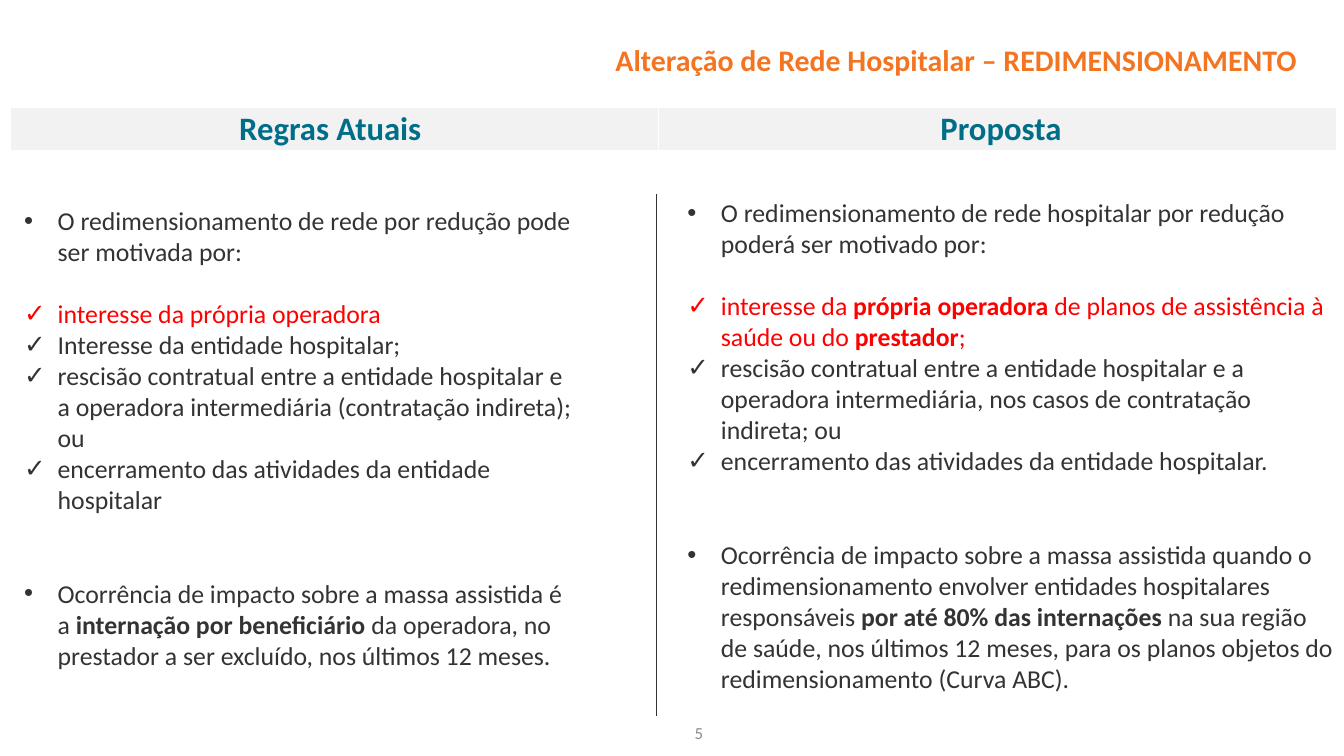
from lxml import etree
from pptx import Presentation
from pptx.dml.color import RGBColor
from pptx.enum.shapes import MSO_CONNECTOR
from pptx.enum.text import MSO_ANCHOR, PP_ALIGN
from pptx.oxml.ns import qn
from pptx.util import Cm, Pt

ORANGE = RGBColor(0xF4, 0x75, 0x21)
TEAL = RGBColor(0x00, 0x6E, 0x89)
BROWN = RGBColor(0xA0, 0x5A, 0x09)
RED = RGBColor(0xFF, 0x00, 0x00)
DARK = RGBColor(0x33, 0x33, 0x33)
GRAY = RGBColor(0x89, 0x89, 0x89)
LIGHT = RGBColor(0xF2, 0xF2, 0xF2)

DOT, CHECK = "•", "✓"

# Each item: bullet, blank lines before it, colour, runs as (wording, bold)
CURRENT_RULES = [
    (DOT, 0, DARK, [("O redimensionamento de rede por redução pode ser motivada por:", False)]),
    (CHECK, 1, RED, [("interesse da própria operadora", False)]),
    (CHECK, 0, DARK, [("Interesse da entidade hospitalar;", False)]),
    (CHECK, 0, DARK, [("rescisão contratual entre a entidade hospitalar e a operadora "
                       "intermediária (contratação indireta); ou", False)]),
    (CHECK, 0, DARK, [("encerramento das atividades da entidade hospitalar", False)]),
    (DOT, 2, DARK, [("Ocorrência de impacto sobre a massa assistida é a ", False),
                    ("internação por beneficiário ", True),
                    ("da operadora, no prestador a ser excluído, nos últimos 12 meses.", False)]),
]
PROPOSAL = [
    (DOT, 0, DARK, [("O redimensionamento de rede hospitalar por redução poderá ser "
                     "motivado por:", False)]),
    (CHECK, 1, RED, [("interesse da ", False), ("própria operadora ", True),
                     ("de planos de assistência à saúde ou do ", False),
                     ("prestador", True), (";", False)]),
    (CHECK, 0, DARK, [("rescisão contratual entre a entidade hospitalar e a operadora "
                       "intermediária, nos casos de contratação indireta; ou", False)]),
    (CHECK, 0, DARK, [("encerramento das atividades da entidade hospitalar.", False)]),
    (DOT, 2, DARK, [("Ocorrência de impacto sobre a massa assistida quando o redimensionamento "
                     "envolver entidades hospitalares responsáveis ", False),
                    ("por até 80% das internações", True),
                    (" na sua região de saúde, nos últimos 12 meses, para os planos objetos "
                     "do redimensionamento (Curva ABC).", False)]),
]


class SlideBuilder:
    font = "Calibri"
    body_size = 27.6
    line_height = 33.7
    indent = Cm(1.27)

    def __init__(self, slide):
        self.slide = slide

    def run(self, paragraph, wording, size, color, bold=False):
        run = paragraph.add_run()
        run.text = wording
        run.font.name = self.font
        run.font.size = Pt(size)
        run.font.bold = bold
        run.font.color.rgb = color

    def box(self, left, top, width, height):
        area = self.slide.shapes.add_textbox(Cm(left), Cm(top), Cm(width), Cm(height))
        area.text_frame.word_wrap = True
        return area.text_frame

    def title(self, wording):
        frame = self.box(0, 1.12, 50.8, 2.29)
        frame.vertical_anchor = MSO_ANCHOR.MIDDLE
        frame.margin_right = Cm(1.5)
        frame.paragraphs[0].alignment = PP_ALIGN.RIGHT
        self.run(frame.paragraphs[0], wording, 32, ORANGE, True)

    def page_number(self, number):
        frame = self.box(26.01, 27.2, 1.98, 1.02)
        self.run(frame.paragraphs[0], number, 18, GRAY)

    def bullet(self, paragraph, mark):
        props = paragraph._p.get_or_add_pPr()
        props.set("marL", str(self.indent))
        props.set("indent", str(-self.indent))
        etree.SubElement(props, qn("a:buFont"), typeface="Arial")
        etree.SubElement(props, qn("a:buChar"), char=mark)

    def bullet_list(self, left, top, width, height, items):
        frame = self.box(left, top, width, height)
        for index, (mark, gap, color, runs) in enumerate(items):
            paragraph = frame.add_paragraph() if index else frame.paragraphs[0]
            self.bullet(paragraph, mark)
            if gap:
                paragraph.space_before = Pt(gap * self.line_height)
            for wording, bold in runs:
                self.run(paragraph, wording, self.body_size, color, bold)

    def cell_borders(self, cell):
        props = cell._tc.get_or_add_tcPr()
        for index, (side, width) in enumerate((("L", 1), ("R", 1), ("T", 1), ("B", 3))):
            border = etree.Element(qn(f"a:ln{side}"), w=str(Pt(width)))
            fill = etree.SubElement(border, qn("a:solidFill"))
            etree.SubElement(fill, qn("a:srgbClr"), val="FFFFFF")
            props.insert(index, border)

    def header_table(self, left, top, height, columns):
        """Columns are (width, runs as (wording, colour))."""
        total = sum(width for width, _ in columns)
        table = self.slide.shapes.add_table(
            1, len(columns), Cm(left), Cm(top), Cm(total), Cm(height)).table
        for index, (width, runs) in enumerate(columns):
            table.columns[index].width = Cm(width)
            cell = table.cell(0, index)
            cell.margin_top = cell.margin_bottom = Cm(0.07)
            cell.fill.solid()
            cell.fill.fore_color.rgb = LIGHT
            self.cell_borders(cell)
            heading = cell.text_frame.paragraphs[0]
            heading.alignment = PP_ALIGN.CENTER
            for wording, color in runs:
                self.run(heading, wording, 35, color, True)

    def divider(self, x, top, bottom):
        line = self.slide.shapes.add_connector(
            MSO_CONNECTOR.STRAIGHT, Cm(x), Cm(top), Cm(x), Cm(bottom))
        line.line.color.rgb = DARK
        line.line.width = Pt(0.75)
        etree.SubElement(line._element.spPr, qn("a:effectLst"))


def main():
    deck = Presentation()
    deck.slide_width, deck.slide_height = Cm(50.8), Cm(28.58)
    builder = SlideBuilder(deck.slides.add_slide(deck.slide_layouts[6]))

    builder.page_number("5")
    builder.title("Alteração de Rede Hospitalar – REDIMENSIONAMENTO ")
    builder.header_table(0.38, 4.06, 1.65, [
        (24.49, [("Regras Atuais ", TEAL)]),
        (25.65, [(" ", BROWN), ("Proposta", TEAL)]),
    ])
    builder.bullet_list(0.66, 7.62, 21.49, 20.6, CURRENT_RULES)
    builder.bullet_list(25.73, 7.32, 25.07, 19.41, PROPOSAL)
    builder.divider(24.79, 7.32, 27.08)
    deck.save("out.pptx")


if __name__ == "__main__":
    main()
